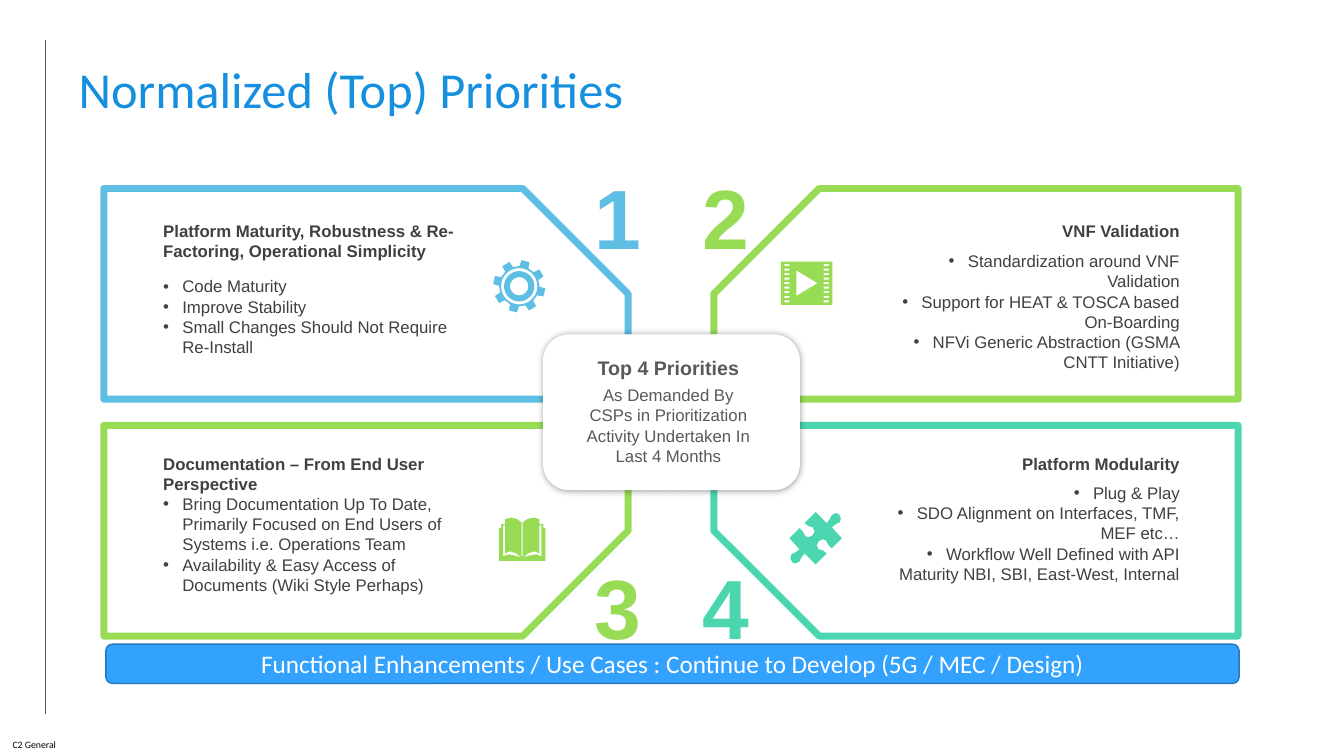
import math

from lxml import etree
from pptx import Presentation
from pptx.dml.color import RGBColor
from pptx.enum.shapes import MSO_CONNECTOR, MSO_SHAPE
from pptx.enum.text import MSO_ANCHOR, PP_ALIGN
from pptx.oxml.ns import qn
from pptx.util import Inches, Pt

LEFT, CENTER, RIGHT = PP_ALIGN.LEFT, PP_ALIGN.CENTER, PP_ALIGN.RIGHT
TOP, MIDDLE = MSO_ANCHOR.TOP, MSO_ANCHOR.MIDDLE
SNIPPED, ROUNDED = MSO_SHAPE.SNIP_1_RECTANGLE, MSO_SHAPE.ROUNDED_RECTANGLE
STRAIGHT = MSO_CONNECTOR.STRAIGHT

COLORS = {
    "title": "168FDF", "blue": "5EBEE4", "green": "98DC56", "teal": "4CD6B0",
    "text": "404040", "center": "595959", "banner": "32A2FE",
    "banner_line": "2578BC", "white": "FFFFFF", "black": "000000",
}
PANEL_WIDTH, PANEL_HEIGHT = 5.2, 2.09


def color(name):
    return RGBColor.from_string(COLORS[name])


def style_paragraph(paragraph, size, color_name, align=LEFT, font="Arial", bold=False):
    paragraph.alignment = align
    paragraph.font.size = Pt(size)
    paragraph.font.name = font
    paragraph.font.bold = bold
    paragraph.font.color.rgb = color(color_name)


def add_text(slide, box, lines, size, color_name, align=LEFT, font="Arial",
             bold=False, anchor=TOP, bullets=False):
    frame = slide.shapes.add_textbox(*map(Inches, box)).text_frame
    frame.word_wrap = True
    frame.vertical_anchor = anchor
    for index, line in enumerate(lines):
        paragraph = frame.add_paragraph() if index else frame.paragraphs[0]
        paragraph.text = line
        if bullets:
            properties = paragraph._p.get_or_add_pPr()
            properties.set("marL", str(Inches(0.19)))
            properties.set("indent", str(-Inches(0.19)))
            etree.SubElement(properties, qn("a:buFont"), typeface="Arial")
            etree.SubElement(properties, qn("a:buChar"), char="•")
        style_paragraph(paragraph, size, color_name, align, font, bold)
    return frame


def add_box(slide, kind, box, fill, line, line_width):
    shape = slide.shapes.add_shape(kind, *map(Inches, box))
    shape.shadow.inherit = False
    shape.fill.solid()
    shape.fill.fore_color.rgb = color(fill)
    shape.line.color.rgb = color(line)
    shape.line.width = Pt(line_width)
    return shape


def circle(radius):
    angles = (math.radians(step * 10) for step in range(36))
    return [(radius * math.cos(angle), radius * math.sin(angle)) for angle in angles]


def rectangle(left, top, right, bottom):
    return [(left, top), (right, top), (right, bottom), (left, bottom)]


def gear_contours():
    teeth = []
    for tooth in range(8):
        for offset, radius in ((-13, 0.2), (-9, 0.26), (9, 0.26), (13, 0.2)):
            angle = math.radians(tooth * 45 + 14 + offset)
            teeth.append((radius * math.cos(angle), radius * math.sin(angle)))
    return [teeth, circle(0.18), circle(0.15), circle(0.09)]


def film_contours():
    contours = [rectangle(-0.255, -0.215, 0.255, 0.215),
                [(-0.1, -0.125), (-0.1, 0.125), (0.11, 0)]]
    for row in range(9):
        top = -0.19 + row * 0.045
        contours += [rectangle(left, top, left + 0.05, top + 0.02)
                     for left in (-0.22, 0.17)]
    return contours


def book_contours():
    def mirror(points):
        return [(-x, y) for x, y in points]

    cover = [(0, -0.16), (0.05, -0.2), (0.11, -0.215), (0.17, -0.2), (0.17, -0.15),
             (0.21, -0.15), (0.21, -0.11), (0.23, -0.11), (0.23, 0.215)]
    page_edge = [(0.19, -0.14), (0.17, -0.14), (0.17, 0.14), (0.12, 0.12),
                 (0.06, 0.14), (0.01, 0.18), (0.08, 0.16), (0.14, 0.15), (0.19, 0.17)]
    spine = rectangle(-0.005, -0.16, 0.005, 0.17)
    return [cover + mirror(cover)[::-1], page_edge, mirror(page_edge), spine]


def puzzle_contours():
    half = [(0.23, -0.24), (0.25, -0.2), (0.24, -0.16), (0.2, -0.14), (0.16, -0.11),
            (0.26, 0), (0.16, 0.1), (0.13, 0.07), (0.1, 0.02), (0.07, 0.01),
            (0.03, 0.03), (0.01, 0.07), (0.03, 0.11), (0.07, 0.12), (0.11, 0.15),
            (0, 0.26), (-0.11, 0.15), (-0.14, 0.19), (-0.16, 0.23), (-0.2, 0.25)]
    return [half + [(-x, -y) for x, y in half]]


def add_icon(slide, center_x, center_y, contours, color_name):
    builder = None
    for contour in contours:
        points = [(Inches(center_x + x), Inches(center_y + y)) for x, y in contour]
        if builder is None:
            builder = slide.shapes.build_freeform(*points[0], scale=1.0)
        else:
            builder.move_to(*points[0])
        builder.add_line_segments(points[1:], close=True)
    icon = builder.convert_to_shape()
    icon.shadow.inherit = False
    icon.fill.solid()
    icon.fill.fore_color.rgb = color(color_name)
    icon.line.fill.background()


def add_panel(slide, left, top, number, color_name, heading, bullets, list_offset,
              contours, icon_x, icon_y):
    """Draw one priority, its snipped corner turned towards the slide centre."""
    on_right, on_bottom = number in (2, 4), number in (3, 4)
    frame = add_box(slide, SNIPPED, (left, top, PANEL_WIDTH, PANEL_HEIGHT),
                    "white", color_name, 5)
    frame.adjustments[0] = 0.5
    transform = frame.element.spPr.find(qn("a:xfrm"))
    if on_right:
        transform.set("flipH", "1")
    if on_bottom:
        transform.set("flipV", "1")

    text_left = left + (1.51 if on_right else 0.49)
    align = RIGHT if on_right else LEFT
    heading_top = top + (0.23 if on_bottom else 0.27)
    add_text(slide, (text_left, heading_top, 3.21, 0.5), [heading], 12, "text",
             align, bold=True)
    add_text(slide, (text_left, top + list_offset, 3.21, 1.11), bullets, 12, "text",
             align, bullets=True)
    number_left = left + (-0.42 if on_right else 4.56)
    number_top = top + (1.24 if on_bottom else -0.28)
    add_text(slide, (number_left, number_top, 1.08, 1.11), [str(number)], 60,
             color_name, CENTER, bold=True, anchor=MIDDLE)
    add_icon(slide, left + icon_x, top + icon_y, contours, color_name)


def add_center_card(slide, left, top):
    card = add_box(slide, ROUNDED, (left, top, 2.54, 1.54), "white", "white", 0.5)
    effects = card.element.spPr.find(qn("a:effectLst"))
    shadow = etree.SubElement(effects, qn("a:outerShdw"), blurRad=str(Pt(5)),
                              dist="0", dir="0", algn="ctr", rotWithShape="0")
    shade = etree.SubElement(shadow, qn("a:srgbClr"), val=COLORS["black"])
    etree.SubElement(shade, qn("a:alpha"), val="40000")
    add_text(slide, (left + 0.32, top + 0.16, 1.84, 0.28), ["Top 4 Priorities"], 14,
             "center", CENTER, bold=True)
    add_text(slide, (left + 0.32, top + 0.45, 1.84, 0.9),
             ["As Demanded By CSPs in Prioritization Activity Undertaken In "
              "Last 4 Months"], 12, "center", CENTER)


def add_banner(slide, box):
    banner = add_box(slide, ROUNDED, box, "banner", "banner_line", 1)
    banner.text_frame.vertical_anchor = MIDDLE
    paragraph = banner.text_frame.paragraphs[0]
    paragraph.text = ("Functional Enhancements / Use Cases : Continue to Develop "
                      "(5G / MEC / Design)")
    style_paragraph(paragraph, 18, "white", CENTER, "Calibri")


def add_title_and_margin(slide):
    footer = add_text(slide, (0, 7.27, 0.68, 0.23), ["C2 General"], 7, "black",
                      CENTER, "Calibri", anchor=MIDDLE)
    footer.margin_left = footer.margin_right = 0
    footer.margin_top = footer.margin_bottom = 0
    rule = slide.shapes.add_connector(STRAIGHT, Inches(0.45), Inches(0.4),
                                      Inches(0.45), Inches(7.08))
    rule.line.color.rgb = color("center")
    rule.line.width = Pt(0.5)
    etree.SubElement(rule.element.spPr, qn("a:effectLst"))

    title = slide.shapes.title
    title.left, title.top, title.width, title.height = map(
        Inches, (0.68, 0.4, 11.96, 1.02))
    title.text_frame.vertical_anchor = MIDDLE
    paragraph = title.text_frame.paragraphs[0]
    paragraph.text = "Normalized (Top) Priorities"
    paragraph.line_spacing = 0.9
    style_paragraph(paragraph, 36, "title", LEFT, "Calibri")


def main():
    presentation = Presentation()
    presentation.slide_width, presentation.slide_height = Inches(13.33), Inches(7.5)
    slide = presentation.slides.add_slide(presentation.slide_layouts[5])
    add_title_and_margin(slide)
    add_panel(slide, 1.03, 1.87, 1, "blue",
              "Platform Maturity, Robustness & Re-Factoring, Operational Simplicity",
              ["Code Maturity", "Improve Stability",
               "Small Changes Should Not Require Re-Install"],
              0.82, gear_contours(), 4.12, 0.97)
    add_panel(slide, 7.08, 1.87, 2, "green", "VNF Validation",
              ["Standardization around VNF Validation",
               "Support for HEAT & TOSCA based On-Boarding",
               "NFVi Generic Abstraction (GSMA CNTT Initiative)"],
              0.57, film_contours(), 0.92, 0.94)
    add_panel(slide, 1.03, 4.22, 3, "green", "Documentation – From End User Perspective",
              ["Bring Documentation Up To Date, Primarily Focused on End Users of "
               "Systems i.e. Operations Team",
               "Availability & Easy Access of Documents (Wiki Style Perhaps)"],
              0.63, book_contours(), 4.15, 1.13)
    add_panel(slide, 7.08, 4.22, 4, "teal", "Platform Modularity",
              ["Plug & Play", "SDO Alignment on Interfaces, TMF, MEF etc…",
               "Workflow Well Defined with API Maturity NBI, SBI, East-West, Internal"],
              0.52, puzzle_contours(), 1.01, 1.12)
    add_center_card(slide, 5.39, 3.32)
    add_banner(slide, (1.05, 6.39, 11.24, 0.39))
    presentation.save("out.pptx")


if __name__ == "__main__":
    main()
